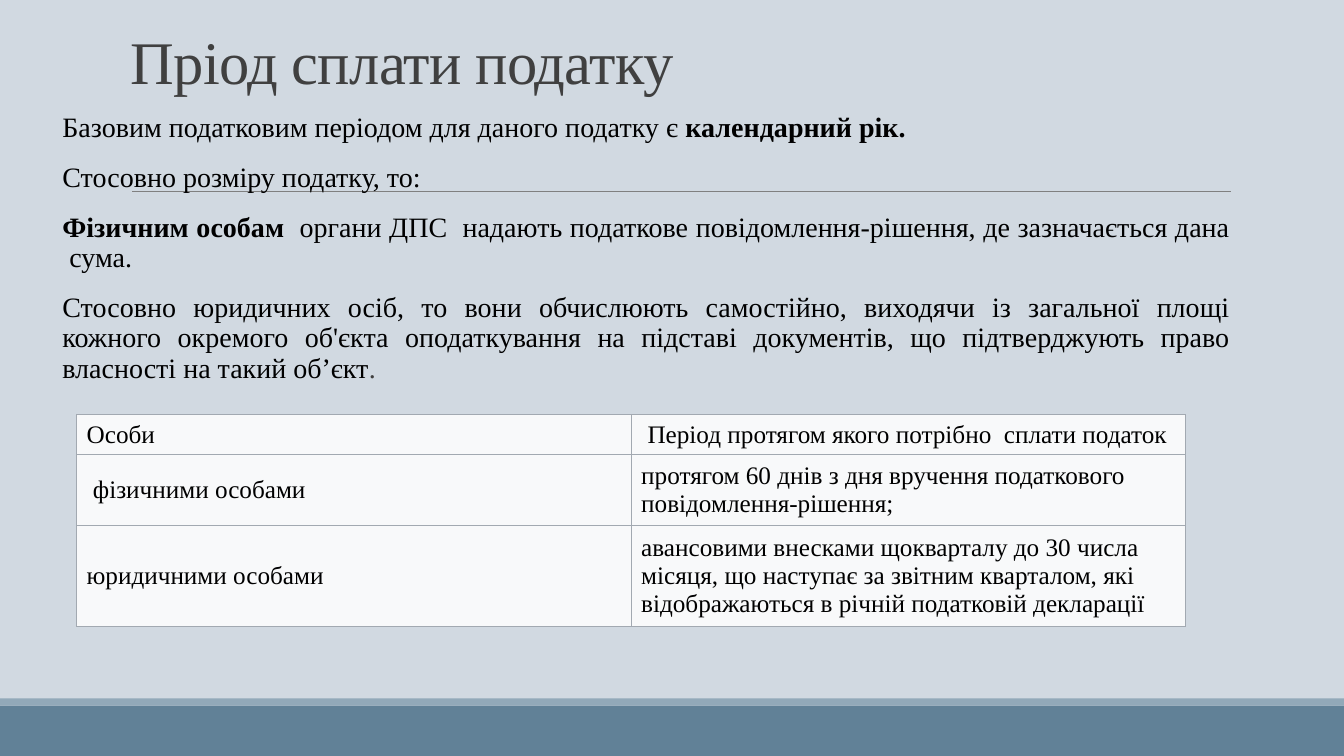
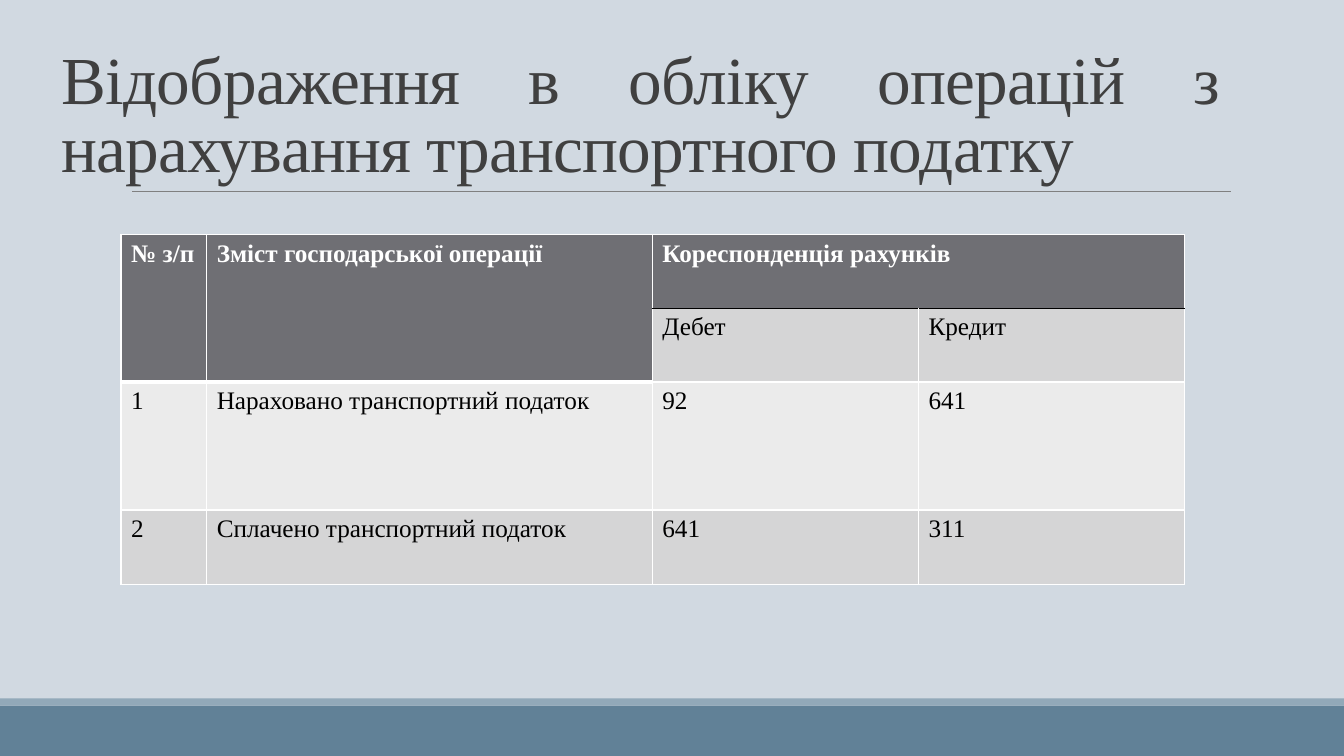
"""Builds two slides on the payment period and bookkeeping of the transport tax."""
from lxml import etree
from pptx import Presentation
from pptx.dml.color import RGBColor
from pptx.enum import shapes, text
from pptx.oxml import ns
from pptx.util import Inches, Pt

FONT = "Times New Roman"
BACKGROUND = RGBColor(0xD1, 0xD9, 0xE1)
BAND = RGBColor(0x61, 0x81, 0x97)
BAND_EDGE = RGBColor(0x92, 0xA9, 0xB9)
RULE = RGBColor(0x80, 0x80, 0x80)
TITLE = RGBColor(0x40, 0x40, 0x40)
BLACK = RGBColor(0, 0, 0)
WHITE = RGBColor(0xFF, 0xFF, 0xFF)
PALE_CELL = RGBColor(0xF8, 0xF9, 0xFA)
PALE_BORDER = RGBColor(0xA2, 0xA9, 0xB1)
HEADER_CELL = RGBColor(0x6F, 0x6F, 0x74)
DARK_ROW = RGBColor(0xD5, 0xD5, 0xD6)
LIGHT_ROW = RGBColor(0xEB, 0xEB, 0xEB)

SLIDE_WIDTH = 13.33
JUSTIFY = text.PP_ALIGN.JUSTIFY
MIDDLE = text.MSO_ANCHOR.MIDDLE

BODY = [
    [("Базовим податковим періодом для даного податку є ", {}),
     ("календарний рік.", {"bold": True})],
    [("Стосовно розміру податку, то:", {})],
    [("Фізичним особам  ", {"bold": True}),
     ("органи ДПС  надають податкове повідомлення-рішення, де зазначається дана  сума.", {})],
    [("Стосовно юридичних осіб, то вони обчислюють самостійно, виходячи із загальної площі "
      "кожного окремого об'єкта оподаткування на підставі документів, що підтверджують право "
      "власності на такий об’єкт", {}),
     (".", {"color": TITLE})],
]
PERIODS = [
    ["Особи", " Період протягом якого потрібно  сплати податок"],
    [" фізичними особами",
     "протягом 60 днів з дня вручення податкового повідомлення-рішення;"],
    ["юридичними особами",
     "авансовими внесками щокварталу до 30 числа місяця, що наступає за звітним кварталом, "
     "які відображаються в річній податковій декларації"],
]
ENTRIES = [
    ["№ з/п", "Зміст господарської операції", "Кореспонденція рахунків", ""],
    ["", "", "Дебет", "Кредит"],
    ["1", "Нараховано транспортний податок", "92", "641"],
    ["2", "Сплачено транспортний податок", "641", "311"],
]


def add_run(paragraph, content, size=18, color=BLACK, bold=False, spacing=None):
    run = paragraph.add_run()
    run.text = content
    run.font.name = FONT
    run.font.size = Pt(size)
    run.font.bold = bold
    run.font.color.rgb = color
    if spacing is not None:
        run.font._element.set("spc", str(int(spacing * 100)))


def add_text_box(slide, left, top, width, height, anchor=text.MSO_ANCHOR.TOP):
    frame = slide.shapes.add_textbox(
        Inches(left), Inches(top), Inches(width), Inches(height)).text_frame
    frame.word_wrap = True
    frame.vertical_anchor = anchor
    return frame


def add_title(slide, content, left, width, height, size, align=None):
    frame = add_text_box(slide, left, 0.31, width, height, text.MSO_ANCHOR.BOTTOM)
    paragraph = frame.paragraphs[0]
    paragraph.alignment = align
    paragraph.line_spacing = 0.85
    add_run(paragraph, content, size=size, color=TITLE, spacing=-0.5)


def add_body(slide, paragraphs):
    frame = add_text_box(slide, 0.52, 1.08, 11.68, 5.34)
    frame.margin_right = 0
    for index, runs in enumerate(paragraphs):
        paragraph = frame.add_paragraph() if index else frame.paragraphs[0]
        paragraph.alignment = JUSTIFY
        paragraph.line_spacing = 0.9
        paragraph.space_before = Pt(12 if index else 0)
        paragraph.space_after = Pt(2)
        for content, style in runs:
            add_run(paragraph, content, size=20, **style)


def add_band(slide, top, height, color):
    band = slide.shapes.add_shape(
        shapes.MSO_SHAPE.RECTANGLE, 0, Inches(top), Inches(SLIDE_WIDTH), Inches(height))
    band.shadow.inherit = False
    band.fill.solid()
    band.fill.fore_color.rgb = color
    band.line.fill.background()


def add_rule(slide, left, right, top):
    rule = slide.shapes.add_connector(
        shapes.MSO_CONNECTOR.STRAIGHT, Inches(left), Inches(top), Inches(right), Inches(top))
    rule.line.color.rgb = RULE
    rule.line.width = Pt(0.5)
    etree.SubElement(rule._element.spPr, ns.qn("a:effectLst"))


def add_slide(presentation):
    slide = presentation.slides.add_slide(presentation.slide_layouts[6])
    slide.background.fill.solid()
    slide.background.fill.fore_color.rgb = BACKGROUND
    add_band(slide, 7, 0.5, BAND)
    add_band(slide, 6.93, 0.07, BAND_EDGE)
    add_rule(slide, 1.31, 12.21, 1.9)
    return slide


def set_borders(cell, border, **edges):
    properties = cell._tc.get_or_add_tcPr()
    for side in ("L", "R", "T", "B"):
        color, width = edges.get(side, border)
        line = etree.SubElement(properties, ns.qn(f"a:ln{side}"), w=str(Pt(width)))
        fill = etree.SubElement(line, ns.qn("a:solidFill"))
        etree.SubElement(fill, ns.qn("a:srgbClr"), val=str(color))


def fill_cell(cell, content, fill, anchor=None, **style):
    cell.fill.solid()
    cell.fill.fore_color.rgb = fill
    cell.vertical_anchor = anchor
    if content:
        add_run(cell.text_frame.paragraphs[0], content, **style)


def add_table(slide, left, top, widths, heights):
    table = slide.shapes.add_table(
        len(heights), len(widths), Inches(left), Inches(top),
        Inches(sum(widths)), Inches(sum(heights))).table
    table.first_row = table.horz_banding = False
    for column, width in zip(table.columns, widths):
        column.width = Inches(width)
    for row, height in zip(table.rows, heights):
        row.height = Inches(height)
    return table


def add_period_table(slide):
    table = add_table(slide, 0.76, 4.11, [5.5, 5.5], [0.37, 0.65, 0.93])
    for row, contents in enumerate(PERIODS):
        for column, content in enumerate(contents):
            cell = table.cell(row, column)
            set_borders(cell, (PALE_BORDER, 0.6))
            fill_cell(cell, content, PALE_CELL, MIDDLE)


def add_entry_table(slide):
    table = add_table(slide, 1.2, 2.33, [0.85, 4.42, 2.64, 2.64], [0.73, 0.73, 1.27, 0.74])
    for column in (0, 1):
        table.cell(0, column).merge(table.cell(1, column))
    table.cell(0, 2).merge(table.cell(0, 3))
    row_fills = [HEADER_CELL, DARK_ROW, LIGHT_ROW, DARK_ROW]
    thick, black = (WHITE, 3), (BLACK, 1)
    left_edges = [{"B": thick}, {"B": thick}, {"T": thick}, {}]
    right_edges = [{"B": black}, {"T": black}, {}, {}]
    for row, contents in enumerate(ENTRIES):
        for column, content in enumerate(contents):
            cell = table.cell(row, column)
            edges = left_edges if column < 2 else right_edges
            header = row == 0 or (row == 1 and column < 2)
            set_borders(cell, (WHITE, 1), **edges[row])
            fill_cell(cell, content, HEADER_CELL if header else row_fills[row],
                      color=WHITE if header else BLACK, bold=header)


def main():
    presentation = Presentation()
    presentation.slide_width = Inches(SLIDE_WIDTH)
    presentation.slide_height = Inches(7.5)

    period_slide = add_slide(presentation)
    add_title(period_slide, "Пріод сплати податку", 1.2, 11, 0.7, 43.2)
    add_body(period_slide, BODY)
    add_period_table(period_slide)

    entry_slide = add_slide(presentation)
    add_title(entry_slide, "Відображення в обліку операцій з нарахування транспортного податку",
              0.51, 11.69, 1.59, 48, JUSTIFY)
    add_entry_table(entry_slide)

    presentation.save("out.pptx")


if __name__ == "__main__":
    main()
